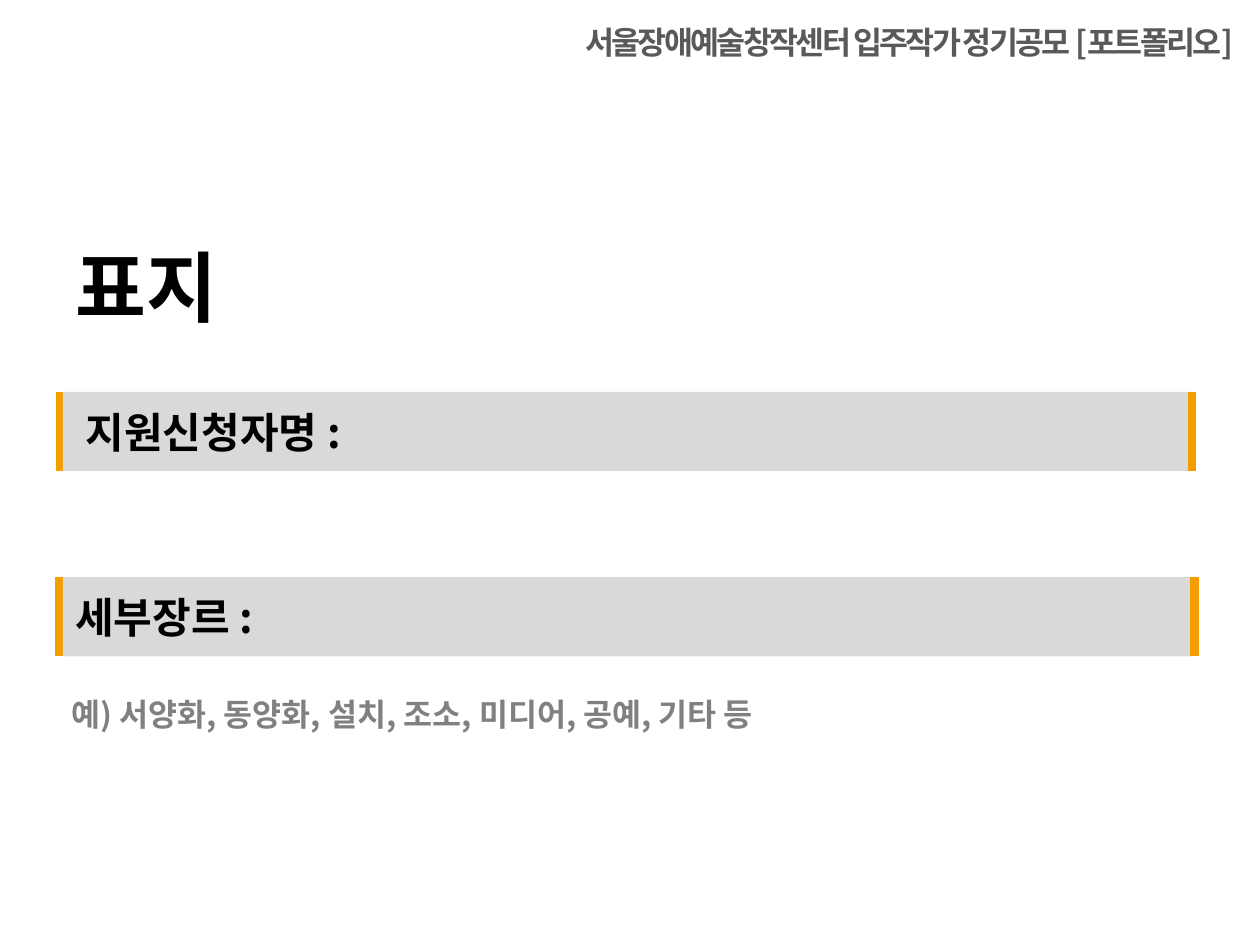
from lxml.etree import SubElement
from pptx import Presentation
from pptx.dml.color import RGBColor
from pptx.enum.shapes import MSO_CONNECTOR, MSO_SHAPE
from pptx.enum.text import MSO_ANCHOR, MSO_AUTO_SIZE, PP_ALIGN
from pptx.oxml.ns import qn
from pptx.util import Inches, Pt

FONT = "Noto Sans CJK KR"
ORANGE, GRAY = "F49D00", "D9D9D9"
BAR_LEFT, BAR_WIDTH, BAR_HEIGHT = 0.5, 8.96, 0.63

# text, (left, top, width, height), size, colour, alignment, letter spacing
HEADER = ("서울장애예술창작센터 입주작가 정기공모 [포트폴리오]",
          (3.98, 0.13, 5.91, 0.4), 18, "595959", PP_ALIGN.RIGHT, -1.5)
TITLE = ("표지", (0.5, 1.85, 3.98, 0.84), 44, "000000", PP_ALIGN.LEFT, 0)
EXAMPLE = ("예) 서양화, 동양화, 설치, 조소, 미디어, 공예, 기타 등",
           (0.47, 5.47, 6.2, 0.4), 18, "808080", PP_ALIGN.LEFT, 0)

# label, top, left inset, x of left edge line, x of right edge line
BARS = [
    ("지원신청자명 :", 3.11, 0.18, 0.48, 9.46),
    ("세부장르 :", 4.58, 0.1, 0.47, 9.48),
]


def color(value):
    return RGBColor.from_string(value)


def write(text_frame, text, size, text_color, alignment, spacing=0):
    text_frame.text = text
    text_frame.word_wrap = True
    paragraph = text_frame.paragraphs[0]
    paragraph.alignment = alignment
    run = paragraph.runs[0]
    run.font.size = Pt(size)
    run.font.bold = True
    run.font.name = FONT
    run.font.color.rgb = color(text_color)
    properties = run.font._element
    SubElement(properties, qn("a:ea")).set("typeface", FONT)
    if spacing:
        properties.set("spc", str(round(spacing * 100)))


def add_text(slide, text, box, *style):
    shape = slide.shapes.add_textbox(*map(Inches, box))
    write(shape.text_frame, text, *style)
    shape.text_frame.auto_size = MSO_AUTO_SIZE.SHAPE_TO_FIT_TEXT


def add_edge(slide, x, top):
    line = slide.shapes.add_connector(
        MSO_CONNECTOR.STRAIGHT, Inches(x), Inches(top),
        Inches(x), Inches(top + BAR_HEIGHT))
    line.line.color.rgb = color(ORANGE)
    line.line.width = Pt(5)
    SubElement(line._element.spPr, qn("a:effectLst"))


def add_bar(slide, label, top, inset, left_edge, right_edge):
    add_edge(slide, left_edge, top)
    shape = slide.shapes.add_shape(
        MSO_SHAPE.RECTANGLE, Inches(BAR_LEFT), Inches(top),
        Inches(BAR_WIDTH), Inches(BAR_HEIGHT))
    shape.shadow.inherit = False
    shape.fill.solid()
    shape.fill.fore_color.rgb = color(GRAY)
    shape.line.fill.background()
    write(shape.text_frame, label, 24, "000000", PP_ALIGN.LEFT)
    shape.text_frame.vertical_anchor = MSO_ANCHOR.MIDDLE
    shape.text_frame.margin_left = Inches(inset)
    add_edge(slide, right_edge, top)


def main():
    presentation = Presentation()
    presentation.slide_width = Inches(10)
    presentation.slide_height = Inches(7.5)
    slide = presentation.slides.add_slide(presentation.slide_layouts[6])

    # Header and cover title
    add_text(slide, *HEADER)
    add_text(slide, *TITLE)

    # Applicant and genre bars
    for bar in BARS:
        add_bar(slide, *bar)

    # Genre examples
    add_text(slide, *EXAMPLE)
    presentation.save("out.pptx")


if __name__ == "__main__":
    main()
